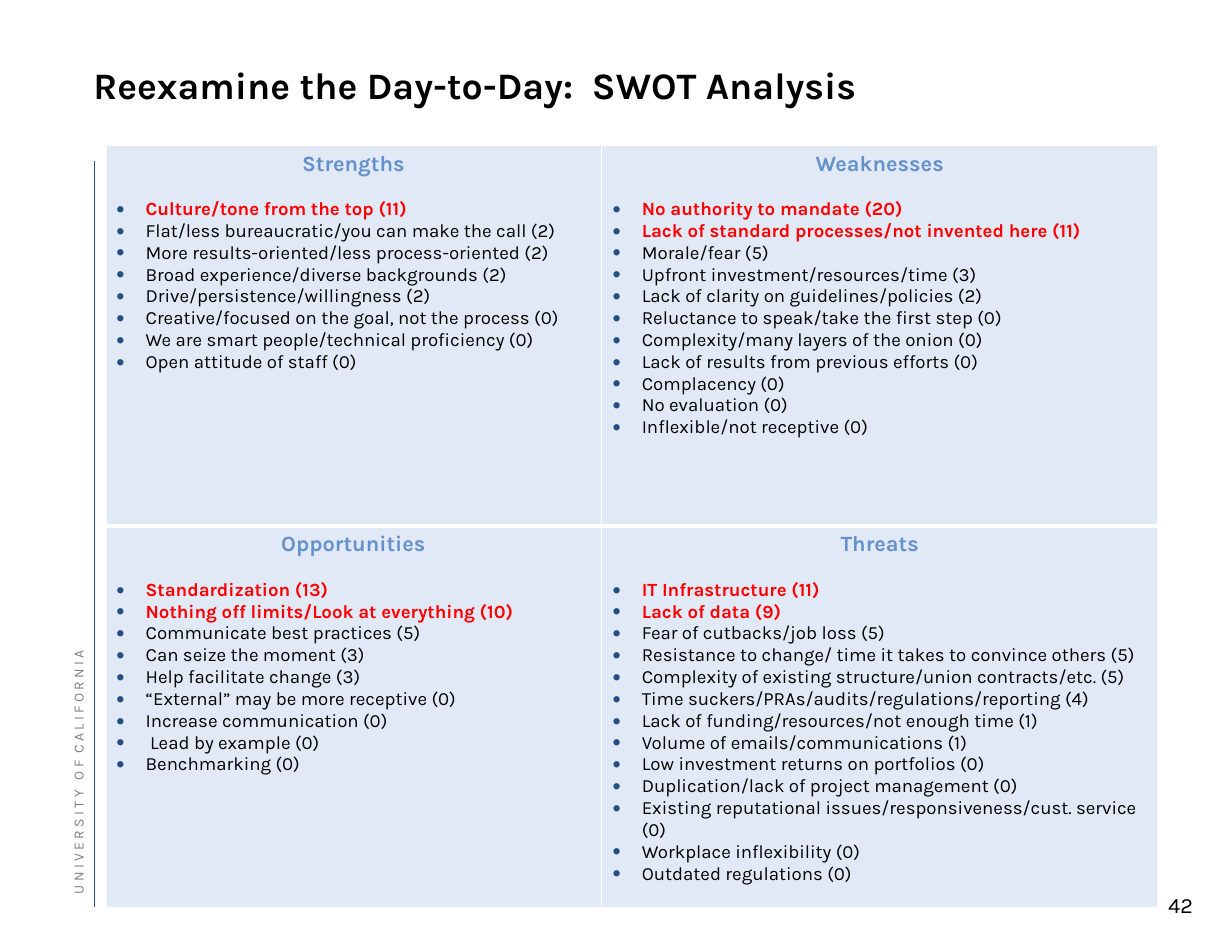
from lxml.etree import SubElement
from pptx import Presentation
from pptx.dml.color import RGBColor
from pptx.enum.shapes import MSO_CONNECTOR as CONN
from pptx.enum.text import MSO_ANCHOR as ANCHOR, PP_ALIGN as ALIGN
from pptx.oxml.ns import qn
from pptx.util import Pt

FONT = "Karla"
BLACK = RGBColor(0x00, 0x00, 0x00)
WHITE = RGBColor(0xFF, 0xFF, 0xFF)
GRAY = RGBColor(0x80, 0x80, 0x80)
RED = RGBColor(0xFF, 0x00, 0x00)
NAVY = RGBColor(0x26, 0x4E, 0x84)
BLUE = RGBColor(0x64, 0x90, 0xCB)
PALE = RGBColor(0xE0, 0xE9, 0xF5)

INDENT = Pt(18.72)

SWOT = [
    [
        ("Strengths", ["Culture/tone from the top (11)"], [
            "Flat/less bureaucratic/you can make the call (2)",
            "More results-oriented/less process-oriented (2)",
            "Broad experience/diverse backgrounds (2)",
            "Drive/persistence/willingness (2)",
            "Creative/focused on the goal, not the process (0)",
            "We are smart people/technical proficiency (0)",
            "Open attitude of staff (0)",
        ]),
        ("Weaknesses", [
            "No authority to mandate (20)",
            "Lack of standard processes/not invented here (11)",
        ], [
            "Morale/fear (5)",
            "Upfront investment/resources/time (3)",
            "Lack of clarity on guidelines/policies (2)",
            "Reluctance to speak/take the first step (0)",
            "Complexity/many layers of the onion (0)",
            "Lack of results from previous efforts (0)",
            "Complacency (0)",
            "No evaluation (0)",
            "Inflexible/not receptive (0)",
        ]),
    ],
    [
        ("Opportunities", [
            "Standardization (13)",
            "Nothing off limits/Look at everything (10)",
        ], [
            "Communicate best practices (5)",
            "Can seize the moment (3)",
            "Help facilitate change (3)",
            "“External” may be more receptive (0)",
            "Increase communication (0)",
            " Lead by example (0)",
            "Benchmarking (0)",
        ]),
        ("Threats", ["IT Infrastructure (11)", "Lack of data (9)"], [
            "Fear of cutbacks/job loss (5)",
            "Resistance to change/ time it takes to convince others (5)",
            "Complexity of existing structure/union contracts/etc. (5)",
            "Time suckers/PRAs/audits/regulations/reporting (4)",
            "Lack of funding/resources/not enough time (1)",
            "Volume of emails/communications (1)",
            "Low investment returns on portfolios (0)",
            "Duplication/lack of project management (0)",
            "Existing reputational issues/responsiveness/cust. service (0)",
            "Workplace inflexibility (0)",
            "Outdated regulations (0)",
        ]),
    ],
]


def write(p, text, size=12, color=BLACK, bold=False, align=ALIGN.LEFT,
          line=None, after=0):
    p.alignment = align
    p.space_before, p.space_after = Pt(0), Pt(after)
    if line:
        p.line_spacing = Pt(line)
    r = p.add_run()
    r.text = text
    f = r.font
    f.name, f.size, f.bold = FONT, Pt(size), bold
    f.color.rgb = color


def add_bullet(p):
    pPr = p._p.get_or_add_pPr()
    pPr.set("marL", str(INDENT))
    pPr.set("indent", str(-INDENT))
    SubElement(SubElement(pPr, qn("a:buClr")), qn("a:srgbClr"), val=str(NAVY))
    SubElement(pPr, qn("a:buSzPct"), val="125000")
    SubElement(pPr, qn("a:buFont"), typeface="Arial")
    SubElement(pPr, qn("a:buChar"), char="•")


def set_borders(cell, **widths):
    tcPr = cell._tc.get_or_add_tcPr()
    for side in "LRTB":
        ln = SubElement(tcPr, qn(f"a:ln{side}"), w=str(Pt(widths.get(side, 1))))
        fill = SubElement(ln, qn("a:solidFill"))
        SubElement(fill, qn("a:srgbClr"), val=str(WHITE))


def set_frame(tf, anchor=ANCHOR.TOP, margin=0):
    tf.word_wrap = True
    tf.vertical_anchor = anchor
    tf.margin_left = tf.margin_right = Pt(margin)
    tf.margin_top = tf.margin_bottom = Pt(margin / 2)


def add_title(s, text, left, top, width, height):
    sp = s.shapes.title
    sp.left, sp.top, sp.width, sp.height = map(Pt, (left, top, width, height))
    set_frame(sp.text_frame, ANCHOR.BOTTOM)
    write(sp.text_frame.paragraphs[0], text, size=24, bold=True, line=27.9)


def add_sidebar(s, text, left, top, width, height):
    rule = s.shapes.add_connector(CONN.STRAIGHT, Pt(left + width), Pt(top),
                                  Pt(left + width), Pt(top + height))
    rule.line.color.rgb = NAVY
    rule.line.width = Pt(0.35)
    SubElement(rule._element.spPr, qn("a:effectLst"))

    length, depth = 312, 11
    center, bottom = left + 5, top + height - 8.5
    sp = s.shapes.add_textbox(Pt(center - length / 2),
                              Pt(bottom - (length + depth) / 2),
                              Pt(length), Pt(depth))
    sp.rotation = 270
    set_frame(sp.text_frame, ANCHOR.BOTTOM)
    write(sp.text_frame.paragraphs[0], text, size=9, color=GRAY, line=12)


def add_page_number(s, text, left, top, width, height):
    sp = s.shapes.add_textbox(*map(Pt, (left, top, width, height)))
    set_frame(sp.text_frame, margin=7.2)
    write(sp.text_frame.paragraphs[0], text, size=14, align=ALIGN.RIGHT)


def fill_quadrant(cell, heading, leaders, others):
    cell.fill.solid()
    cell.fill.fore_color.rgb = PALE
    tf = cell.text_frame
    write(tf.paragraphs[0], heading, size=14, color=BLUE, bold=True,
          align=ALIGN.CENTER, after=14)
    for items, color, bold in ((leaders, RED, True), (others, BLACK, False)):
        for item in items:
            p = tf.add_paragraph()
            write(p, item, color=color, bold=bold)
            add_bullet(p)


def add_swot(s, rows, left, top, width, height, first_col=319):
    frame = s.shapes.add_table(2, 2, *map(Pt, (left, top, width, height)))
    table = frame.table
    table.first_row = table.horz_banding = False
    table.columns[0].width = Pt(first_col)
    table.columns[1].width = Pt(width - first_col)
    for i, row in enumerate(rows):
        table.rows[i].height = Pt(height / 2)
        for j, quadrant in enumerate(row):
            cell = table.cell(i, j)
            set_borders(cell, L=1 if j else 3, B=1 if i else 3)
            fill_quadrant(cell, *quadrant)


def main():
    prs = Presentation()
    prs.slide_width, prs.slide_height = Pt(792), Pt(612)
    s = prs.slides.add_slide(prs.slide_layouts[5])
    add_sidebar(s, "U N I V E R S I T Y   O F  C A L I F O R N I A",
                45, 103.7, 15.5, 479.5)
    add_page_number(s, "42", 738, 570, 36, 24)
    add_title(s, "Reexamine the Day-to-Day:  SWOT Analysis", 60, 40.5, 684, 28)
    add_swot(s, SWOT, 67.7, 93.6, 676.8, 489.6)
    prs.save("out.pptx")


if __name__ == "__main__":
    main()
